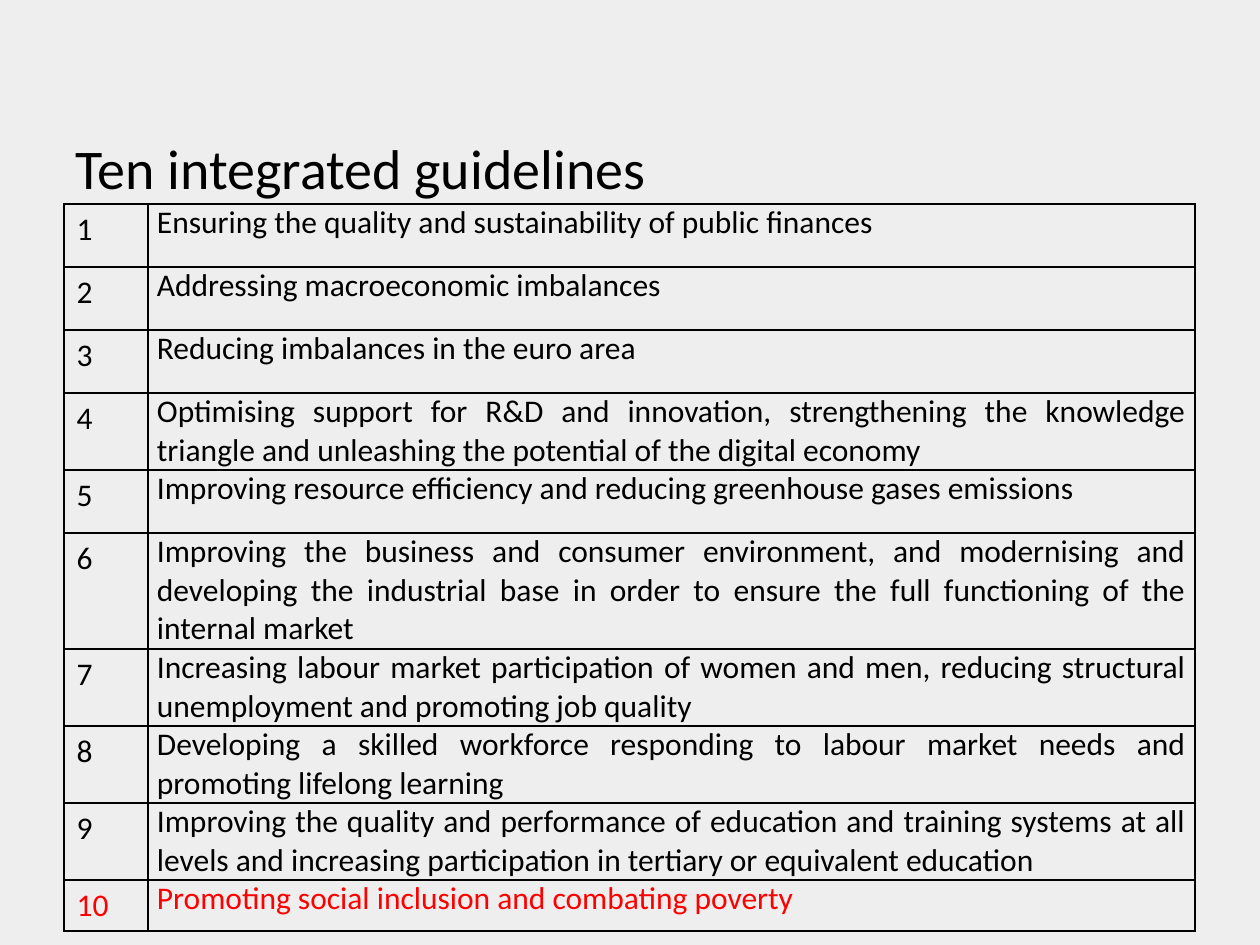
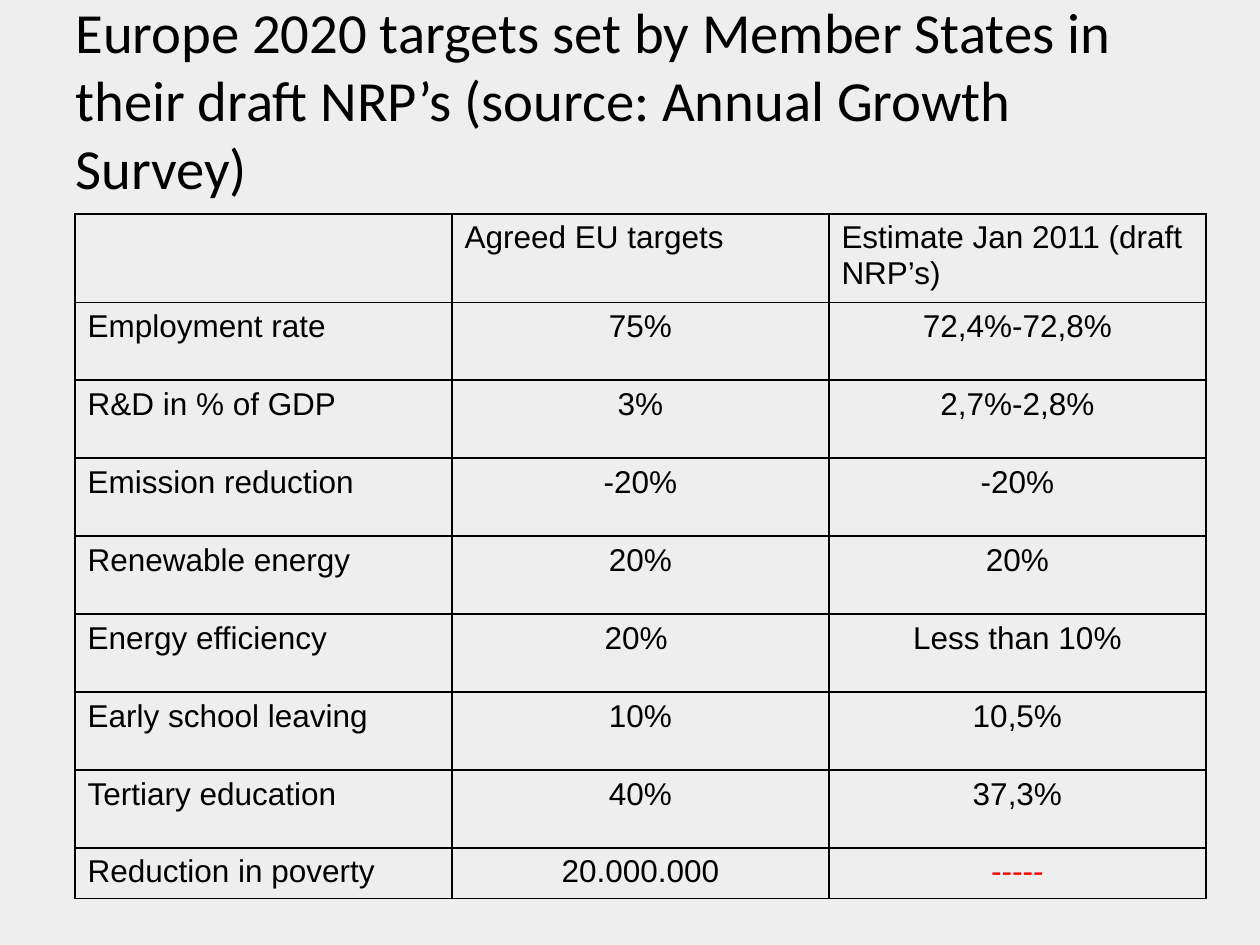
"""Build two slides: the ten integrated guidelines and the Europe 2020 targets."""
from lxml import etree
from pptx import Presentation
from pptx.dml.color import RGBColor
from pptx.enum.text import MSO_ANCHOR as Anchor, PP_ALIGN as Align
from pptx.util import Emu, Pt

SCALE = 914400 / 126
BACK = RGBColor(0xEE, 0xEE, 0xEE)
BLACK = RGBColor(0x00, 0x00, 0x00)
RED = RGBColor(0xFF, 0x00, 0x00)
NS = "http://schemas.openxmlformats.org/drawingml/2006/main"
EDGE = (
    '<a:{} xmlns:a="' + NS + '" w="12700"><a:solidFill>'
    '<a:srgbClr val="000000"/></a:solidFill></a:{}>'
)

GUIDES = [
    "Ensuring the quality and sustainability of public finances",
    "Addressing macroeconomic imbalances",
    "Reducing imbalances in the euro area",
    "Optimising support for R&D and innovation, strengthening the knowledge "
    "triangle and unleashing the potential of the digital economy",
    "Improving resource efficiency and reducing greenhouse gases emissions",
    "Improving the business and consumer environment, and modernising and "
    "developing the industrial base in order to ensure the full functioning "
    "of the internal market",
    "Increasing labour market participation of women and men, reducing "
    "structural unemployment and promoting job quality",
    "Developing a skilled workforce responding to labour market needs and "
    "promoting lifelong learning",
    "Improving the quality and performance of education and training systems "
    "at all levels and increasing participation in tertiary or equivalent "
    "education",
    "Promoting social inclusion and combating poverty",
]
GOALS = [
    ("", "Agreed EU targets", "Estimate Jan 2011 (draft NRP’s)"),
    ("Employment rate", "75%", "72,4%-72,8%"),
    ("R&D in % of GDP", "3%", "2,7%-2,8%"),
    ("Emission reduction", "-20%", "-20%"),
    ("Renewable energy", "20%", "20%"),
    ("Energy efficiency", "20% ", "Less than 10%"),
    ("Early school leaving", "10%", "10,5%"),
    ("Tertiary education", "40%", "37,3%"),
    ("Reduction in poverty", "20.000.000", "-----"),
]
PAGES = [
    {
        "title": "Ten integrated guidelines",
        "size": 32,
        "font": "Calibri",
        "spot": (64, 204),
        "cols": [84, 1047],
        "tall": [63, 63, 63, 77, 63, 116, 77, 77, 77, 51],
        "rows": [(str(n), text) for n, text in enumerate(GUIDES, 1)],
        "red": [(9, 0), (9, 1)],
    },
    {
        "title": "Europe 2020 targets set by Member States in their draft "
        "NRP’s (source: Annual Growth Survey)",
        "size": 32.4,
        "font": "Arial",
        "spot": (75, 214),
        "cols": [377] * 3,
        "tall": [83] + [78] * 7 + [48],
        "rows": GOALS,
        "red": [(8, 2)],
    },
]


def px(*nums):
    return [Emu(round(n * SCALE)) for n in nums]


def write(frame, text, color, **form):
    para = frame.paragraphs[0]
    run = para.add_run()
    run.text = text
    for key, value in form.items():
        setattr(run.font, key, value)
    run.font.color.rgb = color
    return para


deck = Presentation()
deck.slide_width, deck.slide_height = px(1260, 945)

for page in PAGES:
    slide = deck.slides.add_slide(deck.slide_layouts[6])
    slide.background.fill.solid()
    slide.background.fill.fore_color.rgb = BACK

    frame = slide.shapes.add_textbox(*px(63, 49, 1134, 158)).text_frame
    frame.word_wrap = True
    frame.vertical_anchor = Anchor.BOTTOM
    write(frame, page["title"], BLACK, size=Pt(page["size"]), name="Calibri")

    rows, cols, tall = page["rows"], page["cols"], page["tall"]
    box = px(*page["spot"], sum(cols), sum(tall))
    table = slide.shapes.add_table(len(rows), len(cols), *box).table
    table.first_row = table.horz_banding = False
    for col, wide in zip(table.columns, px(*cols)):
        col.width = wide
    for row, high in zip(table.rows, px(*tall)):
        row.height = high

    for r, row in enumerate(rows):
        for c, text in enumerate(row):
            cell = table.cell(r, c)
            cell.fill.background()
            props = cell._tc.get_or_add_tcPr()
            for i, tag in enumerate(("lnL", "lnR", "lnT", "lnB")):
                props.insert(i, etree.fromstring(EDGE.format(tag, tag)))
            if not text:
                continue
            color = RED if (r, c) in page["red"] else BLACK
            para = write(cell.text_frame, text, color, size=Pt(18), name=page["font"])
            if rows is GOALS:
                para.alignment = Align.CENTER if r and c else Align.LEFT
            elif c:
                para.alignment = Align.JUSTIFY
                para.space_after = Pt(2)
                cell.margin_left, cell.margin_right = px(9, 9)
                cell.margin_top = cell.margin_bottom = 0

deck.save("out.pptx")
